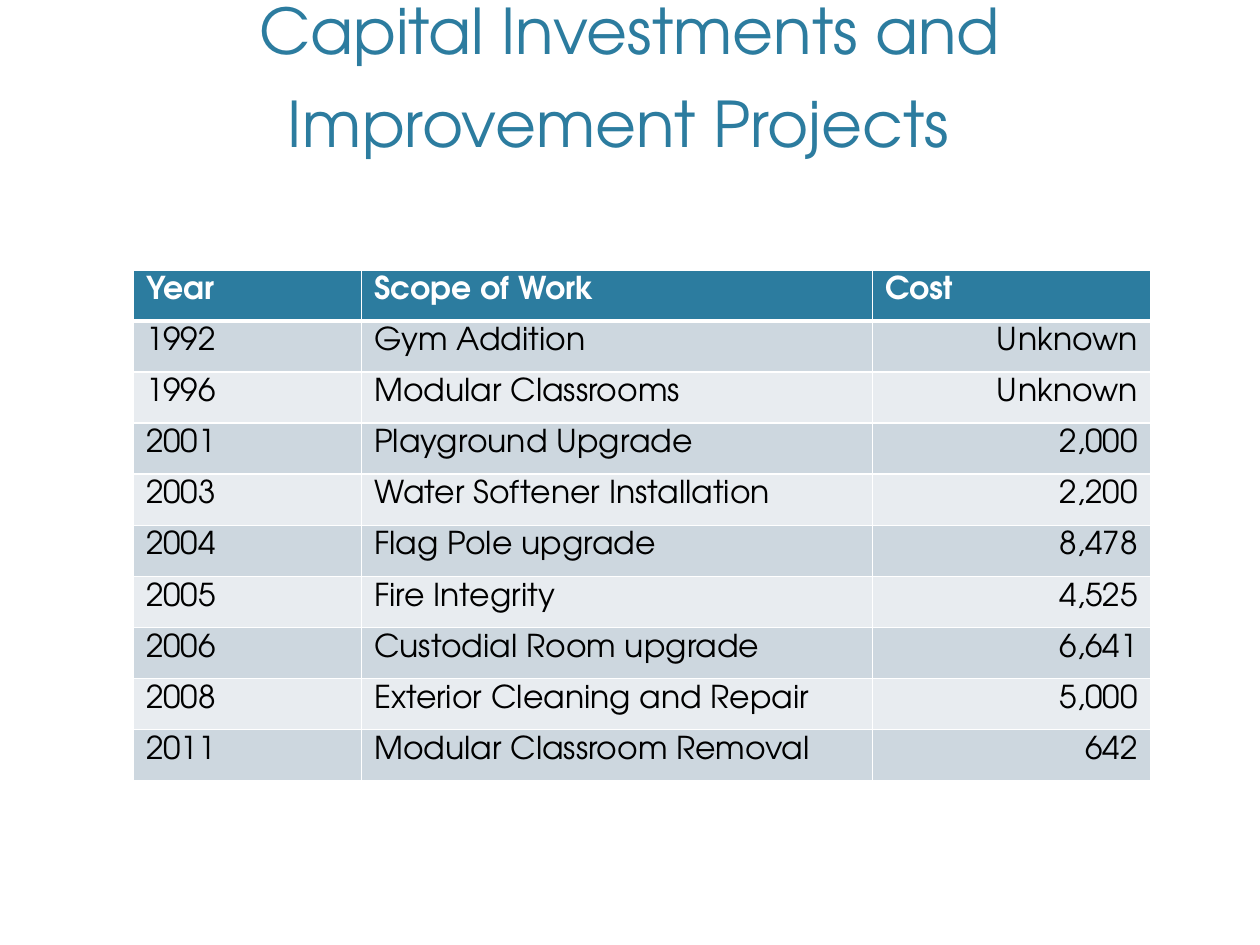
from lxml import etree
from pptx import Presentation
from pptx import util as u
from pptx.dml.color import RGBColor
from pptx.enum import text
from pptx.oxml.ns import qn

TITLE = "Capital Investments and Improvement Projects"
HEADERS = ("Year", "Scope of Work", "Cost")
PROJECTS = [
    ("1992", "Gym Addition", "Unknown"),
    ("1996", "Modular Classrooms", "Unknown"),
    ("2001", "Playground Upgrade", "2,000"),
    ("2003", "Water Softener Installation", "2,200"),
    ("2004", "Flag Pole upgrade", "8,478"),
    ("2005", "Fire Integrity", "4,525"),
    ("2006", "Custodial Room upgrade", "6,641"),
    ("2008", "Exterior Cleaning and Repair", "5,000"),
    ("2011", "Modular Classroom Removal", "642"),
]
COLORS = {
    "accent": "2C7C9F",
    "white": "FFFFFF",
    "black": "000000",
    "odd": "CDD7DF",
    "even": "E8ECF0",
}
FONT = "TeX Gyre Adventor"
COLUMN_WIDTHS = (4.6, 10.3, 5.6)
ROW_HEIGHT = 1.03


def add_span(para, words, size, color, bold=False):
    span = para.add_run()
    span.text = words
    span.font.name = FONT
    span.font.size = u.Pt(size)
    span.font.bold = bold
    span.font.color.rgb = RGBColor.from_string(COLORS[color])


def set_borders(cell, bottom):
    properties = cell._tc.get_or_add_tcPr()
    widths = {"a:lnL": 1, "a:lnR": 1, "a:lnT": 1, "a:lnB": bottom}
    for index, (side, width) in enumerate(widths.items()):
        line = etree.Element(qn(side), w=str(u.Pt(width)))
        fill = etree.SubElement(line, qn("a:solidFill"))
        etree.SubElement(fill, qn("a:srgbClr"), val=COLORS["white"])
        properties.insert(index, line)


def add_title(page):
    box = page.shapes.add_textbox(u.Cm(1.52), u.Cm(1.24), u.Cm(22.35), u.Cm(2.18))
    frame = box.text_frame
    frame.word_wrap = True
    frame.vertical_anchor = text.MSO_ANCHOR.BOTTOM
    para = frame.paragraphs[0]
    para.alignment = text.PP_ALIGN.CENTER
    add_span(para, TITLE, 36, "accent")
    add_span(para, " ", 46, "accent")


def fill_cell(cell, words, row, column):
    header = row == 0
    fill = "accent" if header else "odd" if row % 2 else "even"
    cell.fill.solid()
    cell.fill.fore_color.rgb = RGBColor.from_string(COLORS[fill])
    set_borders(cell, 3 if header else 1)
    para = cell.text_frame.paragraphs[0]
    if column == 2 and not header:
        para.alignment = text.PP_ALIGN.RIGHT
    add_span(para, words, 18, "white" if header else "black", header)


def add_projects(page):
    rows = [HEADERS, *PROJECTS]
    table = page.shapes.add_table(
        len(rows), len(HEADERS), u.Cm(2.69), u.Cm(5.44),
        u.Cm(sum(COLUMN_WIDTHS)), u.Cm(ROW_HEIGHT * len(rows)),
    ).table
    for column, width in zip(table.columns, COLUMN_WIDTHS):
        column.width = u.Cm(width)
    for r, values in enumerate(rows):
        table.rows[r].height = u.Cm(ROW_HEIGHT)
        for c, words in enumerate(values):
            fill_cell(table.cell(r, c), words, r, c)


def main():
    deck = Presentation()
    deck.slide_width, deck.slide_height = u.Cm(25.4), u.Cm(19.05)
    page = deck.slides.add_slide(deck.slide_layouts[6])
    add_title(page)
    add_projects(page)
    deck.save("out.pptx")


if __name__ == "__main__":
    main()
